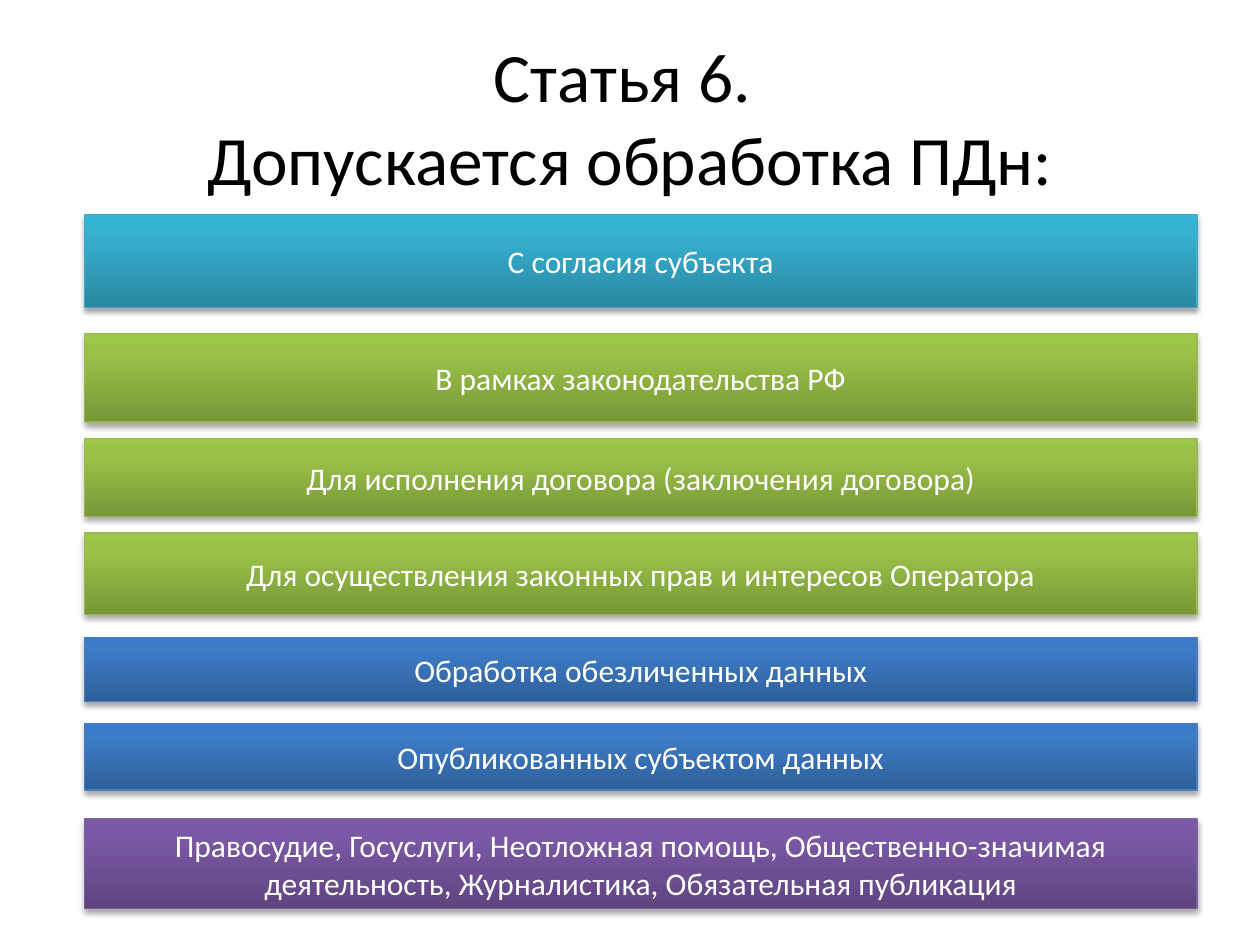
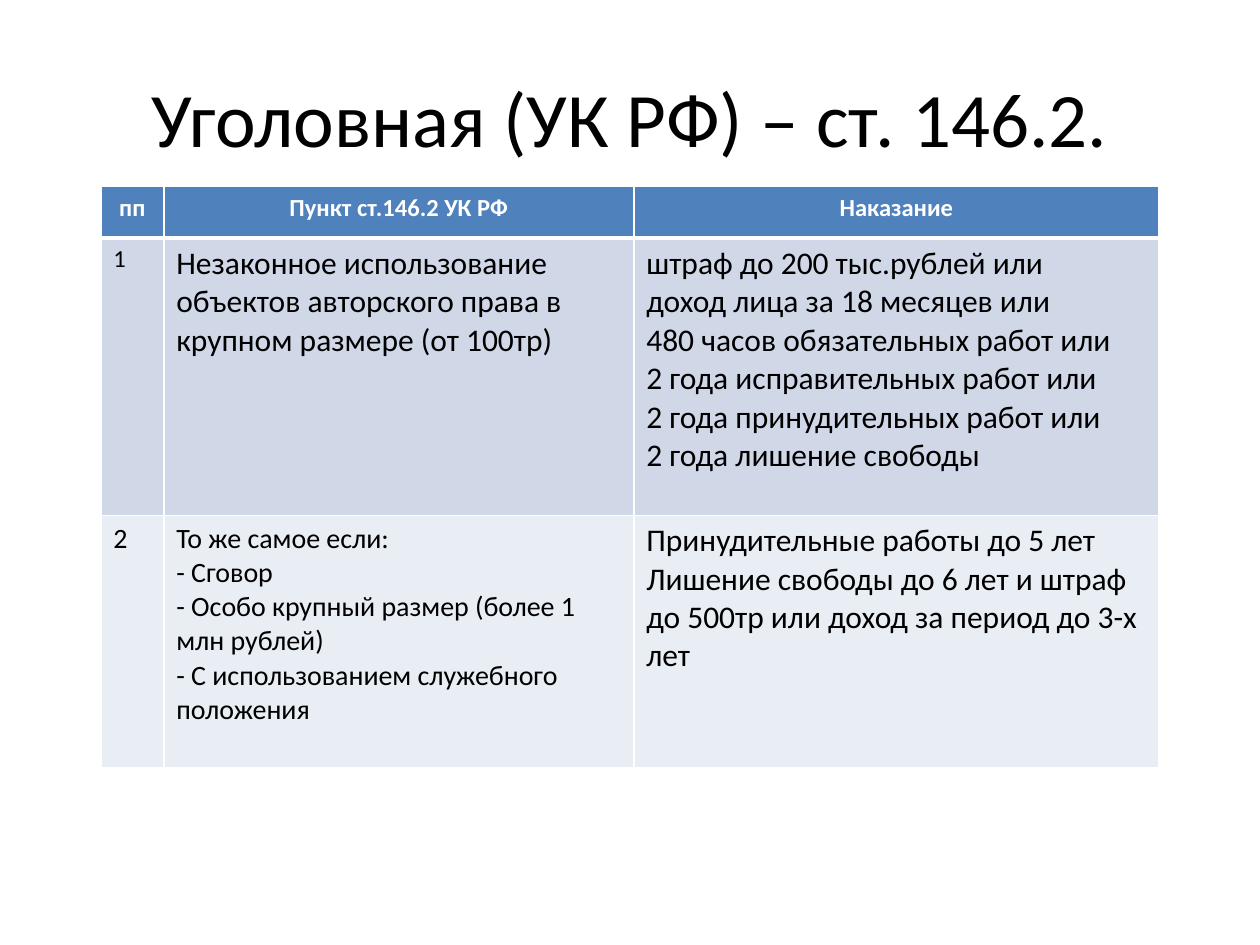
import copy
from dataclasses import dataclass

import lxml.etree
import pptx
import pptx.dml.color
import pptx.enum.shapes
import pptx.enum.text
import pptx.oxml
import pptx.oxml.ns
import pptx.util

LAWFUL_GROUNDS_TITLE = "Статья 6. \vДопускается обработка ПДн:"
LAWFUL_GROUNDS = [
    ("С согласия субъекта", "aqua", 1.7, 0.74),
    ("В рамках законодательства РФ", "green", 2.65, 0.7),
    ("Для исполнения договора (заключения договора)", "green", 3.48, 0.62),
    ("Для осуществления законных прав и интересов Оператора", "green", 4.23, 0.65),
    ("Обработка обезличенных данных", "blue", 5.06, 0.51),
    ("Опубликованных субъектом данных", "blue", 5.74, 0.53),
    ("Правосудие, Госуслуги, Неотложная помощь, Общественно-значимая деятельность, "
     "Журналистика, Обязательная публикация", "purple", 6.5, 0.71),
]

PENALTIES_TITLE = "Уголовная (УК РФ) – ст. 146.2."
PENALTIES = [
    [("пп", 14), ("Пункт ст.146.2 УК РФ", 14), ("Наказание", 14)],
    [
        ("1", 14),
        ("Незаконное использование объектов авторского права в крупном размере (от 100тр)", 18),
        ("штраф до 200 тыс.рублей или\n"
         "доход лица за 18 месяцев или\n"
         "480 часов обязательных работ или\n"
         "2 года исправительных работ или\n"
         "2 года принудительных работ или\n"
         "2 года лишение свободы", 18),
    ],
    [
        ("2", 16),
        ("То же самое если:\n"
         "- Сговор\n"
         "- Особо крупный размер (более 1 млн рублей)\n"
         "- С использованием служебного положения", 16),
        ("Принудительные работы до 5 лет\n"
         "Лишение свободы до 6 лет и штраф до 500тр или доход за период до 3-х лет", 18),
    ],
]
COLUMN_WIDTHS = [0.5, 3.73, 4.17]
ROW_HEIGHTS = [0.41, 2.2, 2.0]
TABLE_LEFT, TABLE_TOP = 0.8, 1.48
BAR_LEFT, BAR_WIDTH = 0.67, 8.83
SLIDE_WIDTH, SLIDE_HEIGHT = 10, 7.5


@dataclass(frozen=True)
class Theme:
    font: str = "Calibri"
    dark: str = "000000"
    light: str = "FFFFFF"
    title_size: float = 44
    long_title_size: float = 39.6
    bar_size: float = 18
    bar_line: float = 0.75
    grid_line: float = 1
    header_line: float = 3
    row_fills: tuple = ("4F81BD", "D0D8E8", "E9EDF4")


THEME = Theme()
GRADIENT_POSITIONS = (0, 0.8, 1)
BAR_COLOURS = {
    "aqua": (("2A88A2", "37B1D2", "34B4D6"), "46AAC5"),
    "green": (("779737", "9BC348", "9DC746"), "98B955"),
    "blue": (("2F5F99", "3D7CC7", "3A7CCB"), "4B7EBC"),
    "purple": (("5F4480", "7B58A6", "7C57A8"), "7D60A0"),
}

inches = pptx.util.Inches
rgb = pptx.dml.color.RGBColor.from_string
qn = pptx.oxml.ns.qn
CENTER = pptx.enum.text.PP_ALIGN.CENTER
LEFT = pptx.enum.text.PP_ALIGN.LEFT
MIDDLE = pptx.enum.text.MSO_ANCHOR.MIDDLE


def write(frame, text, size, colour, alignment=CENTER, bold=False):
    frame.text = text
    frame.word_wrap = True
    for paragraph in frame.paragraphs:
        paragraph.alignment = alignment
        paragraph.font.name = THEME.font
        paragraph.font.size = pptx.util.Pt(size)
        paragraph.font.bold = bold
        paragraph.font.color.rgb = rgb(colour)


def add_titled_slide(presentation, text, size):
    slide = presentation.slides.add_slide(presentation.slide_layouts[5])
    title = slide.shapes.title
    title.left, title.top = inches(0.5), inches(0.3)
    title.width, title.height = inches(9), inches(1.25)
    write(title.text_frame, text, size, THEME.dark)
    title.text_frame.auto_size = pptx.enum.text.MSO_AUTO_SIZE.NONE
    title.text_frame.vertical_anchor = MIDDLE
    return slide


def fill_gradient(shape, colours):
    shape.fill.gradient()
    shape.fill.gradient_angle = 90
    stop_list = shape._element.spPr.find(".//" + qn("a:gsLst"))
    stop_list.append(copy.deepcopy(stop_list[-1]))
    for stop, position, colour in zip(shape.fill.gradient_stops, GRADIENT_POSITIONS, colours):
        stop.position = position
        stop.color.rgb = rgb(colour)


def add_shadow(shape):
    shape.shadow.inherit = False
    effects = shape._element.spPr.find(qn("a:effectLst"))
    shadow = lxml.etree.SubElement(
        effects, qn("a:outerShdw"), blurRad=str(pptx.util.Pt(3.1)),
        dist=str(pptx.util.Pt(1.8)), dir="5400000", rotWithShape="0")
    colour = lxml.etree.SubElement(shadow, qn("a:srgbClr"), val=THEME.dark)
    lxml.etree.SubElement(colour, qn("a:alpha"), val="35000")


def add_bar(slide, text, kind, top, height):
    gradient, outline = BAR_COLOURS[kind]
    bar = slide.shapes.add_shape(
        pptx.enum.shapes.MSO_SHAPE.RECTANGLE,
        inches(BAR_LEFT), inches(top), inches(BAR_WIDTH), inches(height))
    fill_gradient(bar, gradient)
    bar.line.color.rgb = rgb(outline)
    bar.line.width = pptx.util.Pt(THEME.bar_line)
    add_shadow(bar)
    write(bar.text_frame, text, THEME.bar_size, THEME.light)
    bar.text_frame.vertical_anchor = MIDDLE


def set_borders(cell, widths):
    properties = cell._tc.get_or_add_tcPr()
    for side, width in widths.items():
        line = lxml.etree.SubElement(
            properties, qn("a:ln" + side), w=str(pptx.util.Pt(width)))
        fill = lxml.etree.SubElement(line, qn("a:solidFill"))
        lxml.etree.SubElement(fill, qn("a:srgbClr"), val=THEME.light)


def add_penalty_table(slide):
    table = slide.shapes.add_table(
        len(PENALTIES), len(COLUMN_WIDTHS), inches(TABLE_LEFT), inches(TABLE_TOP),
        inches(sum(COLUMN_WIDTHS)), inches(sum(ROW_HEIGHTS))).table
    for column, width in zip(table.columns, COLUMN_WIDTHS):
        column.width = inches(width)
    for row, height in zip(table.rows, ROW_HEIGHTS):
        row.height = inches(height)
    for row_index, row_content in enumerate(PENALTIES):
        is_header = row_index == 0
        borders = dict.fromkeys("LRTB", THEME.grid_line)
        if is_header:
            borders["B"] = THEME.header_line
        elif row_index == 1:
            borders["T"] = THEME.header_line
        for column_index, (text, size) in enumerate(row_content):
            cell = table.cell(row_index, column_index)
            set_borders(cell, borders)
            cell.fill.solid()
            cell.fill.fore_color.rgb = rgb(THEME.row_fills[row_index])
            write(cell.text_frame, text, size,
                  THEME.light if is_header else THEME.dark,
                  CENTER if is_header else LEFT, is_header)


def main():
    presentation = pptx.Presentation()
    presentation.slide_width = inches(SLIDE_WIDTH)
    presentation.slide_height = inches(SLIDE_HEIGHT)
    grounds_slide = add_titled_slide(presentation, LAWFUL_GROUNDS_TITLE, THEME.long_title_size)
    for ground in LAWFUL_GROUNDS:
        add_bar(grounds_slide, *ground)
    penalties_slide = add_titled_slide(presentation, PENALTIES_TITLE, THEME.title_size)
    add_penalty_table(penalties_slide)
    presentation.save("out.pptx")


if __name__ == "__main__":
    main()
